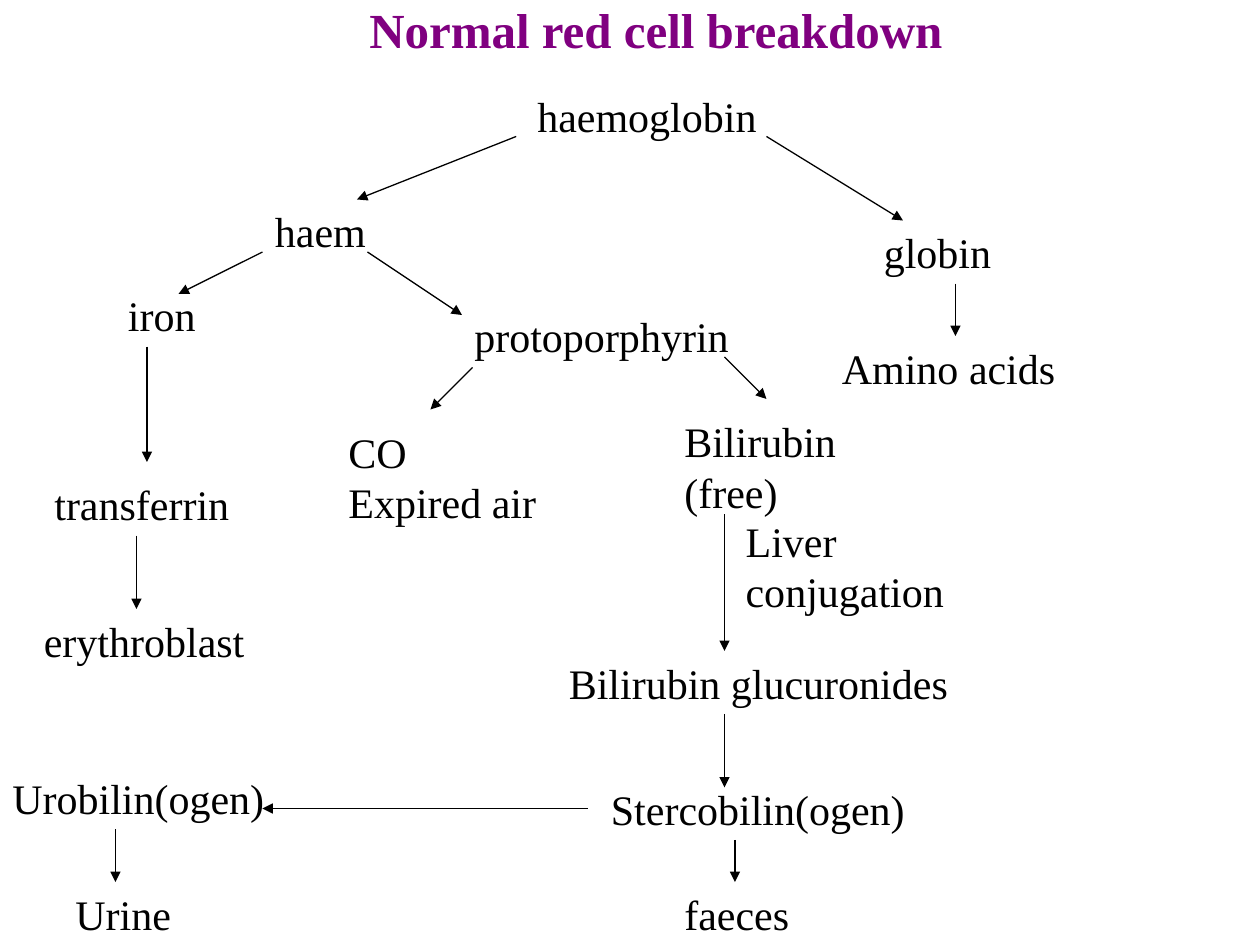
import pptx
import pptx.dml.color
import pptx.enum.shapes
import pptx.enum.text
import pptx.oxml.ns
import pptx.util
from lxml import etree

Pt = pptx.util.Pt
FONT = "Times New Roman"
LINE_HEIGHT = 36
TWO_LINE_HEIGHT = 65

# text, left, top, width
LABELS = [
    ("haemoglobin", 300, 48, 141),
    ("haem", 150, 114, 68),
    ("globin", 498, 126, 77),
    ("iron", 66, 162, 54),
    ("protoporphyrin", 264, 174, 161),
    ("Amino acids", 474, 192, 138),
    ("CO\nExpired air", 192, 240, 123),
    ("Bilirubin\n(free)", 384, 234, 102),
    ("Liver\nconjugation", 419, 291, 129),
    ("transferrin", 24, 270, 116),
    ("erythroblast", 18, 348, 130),
    ("Bilirubin glucuronides", 318, 372, 232),
    ("Stercobilin(ogen)", 342, 444, 184),
    ("Urobilin(ogen)", 0, 438, 160),
    ("Urine", 36, 504, 70),
    ("faeces", 384, 504, 76),
]

# start x, start y, end x, end y
ARROWS = [
    (295, 78, 204, 114),     # haemoglobin to haem
    (438, 78, 516, 126),     # haemoglobin to globin
    (546, 162, 546, 192),    # globin to amino acids
    (150, 144, 102, 168),    # haem to iron
    (210, 144, 264, 180),    # haem to protoporphyrin
    (84, 198, 84, 264),      # iron to transferrin
    (78, 306, 78, 348),      # transferrin to erythroblast
    (270, 210, 246, 234),    # protoporphyrin to CO
    (414, 204, 438, 228),    # protoporphyrin to bilirubin
    (414, 294, 414, 372),    # bilirubin to glucuronides
    (414, 408, 414, 450),    # glucuronides to stercobilin
    (336, 462, 150, 462),    # stercobilin to urobilin
    (66, 474, 66, 504),      # urobilin to urine
    (420, 480, 420, 504),    # stercobilin to faeces
]


def color(hex_value):
    return pptx.dml.color.RGBColor.from_string(hex_value)


def add_text(page, text, left, top, width, height, size=24, ink="000000", bold=False):
    box = page.shapes.add_textbox(Pt(left), Pt(top), Pt(width), Pt(height))
    frame = box.text_frame
    frame.word_wrap = False
    frame.auto_size = pptx.enum.text.MSO_AUTO_SIZE.SHAPE_TO_FIT_TEXT
    frame.text = text
    for para in frame.paragraphs:
        para.font.name = FONT
        para.font.size = Pt(size)
        para.font.bold = bold
        para.font.color.rgb = color(ink)


def add_arrow(page, start_x, start_y, end_x, end_y):
    arrow = page.shapes.add_connector(
        pptx.enum.shapes.MSO_CONNECTOR.STRAIGHT,
        Pt(start_x), Pt(start_y), Pt(end_x), Pt(end_y))
    arrow.line.width = Pt(0.75)
    arrow.line.color.rgb = color("000000")
    properties = arrow._element.spPr
    etree.SubElement(properties.get_or_add_ln(), pptx.oxml.ns.qn("a:tailEnd"),
                     type="triangle")
    etree.SubElement(properties, pptx.oxml.ns.qn("a:effectLst"))


def add_title(page, left, top, width, height):
    add_text(page, "Normal red cell breakdown", left, top, width, height,
             size=28, ink="800080", bold=True)


def add_pathway(page, left, top):
    """Draw the breakdown tree with its origin at the given corner."""
    for text, x, y, width in LABELS:
        height = TWO_LINE_HEIGHT if "\n" in text else LINE_HEIGHT
        add_text(page, text, left + x, top + y, width, height)
    for start_x, start_y, end_x, end_y in ARROWS:
        add_arrow(page, left + start_x, top + start_y, left + end_x, top + end_y)


def main():
    deck = pptx.Presentation()
    deck.slide_width, deck.slide_height = Pt(720), Pt(540)
    page = deck.slides.add_slide(deck.slide_layouts[6])
    add_title(page, 204, -4, 344, 41)
    add_pathway(page, 0, 0)
    deck.save("out.pptx")


if __name__ == "__main__":
    main()
